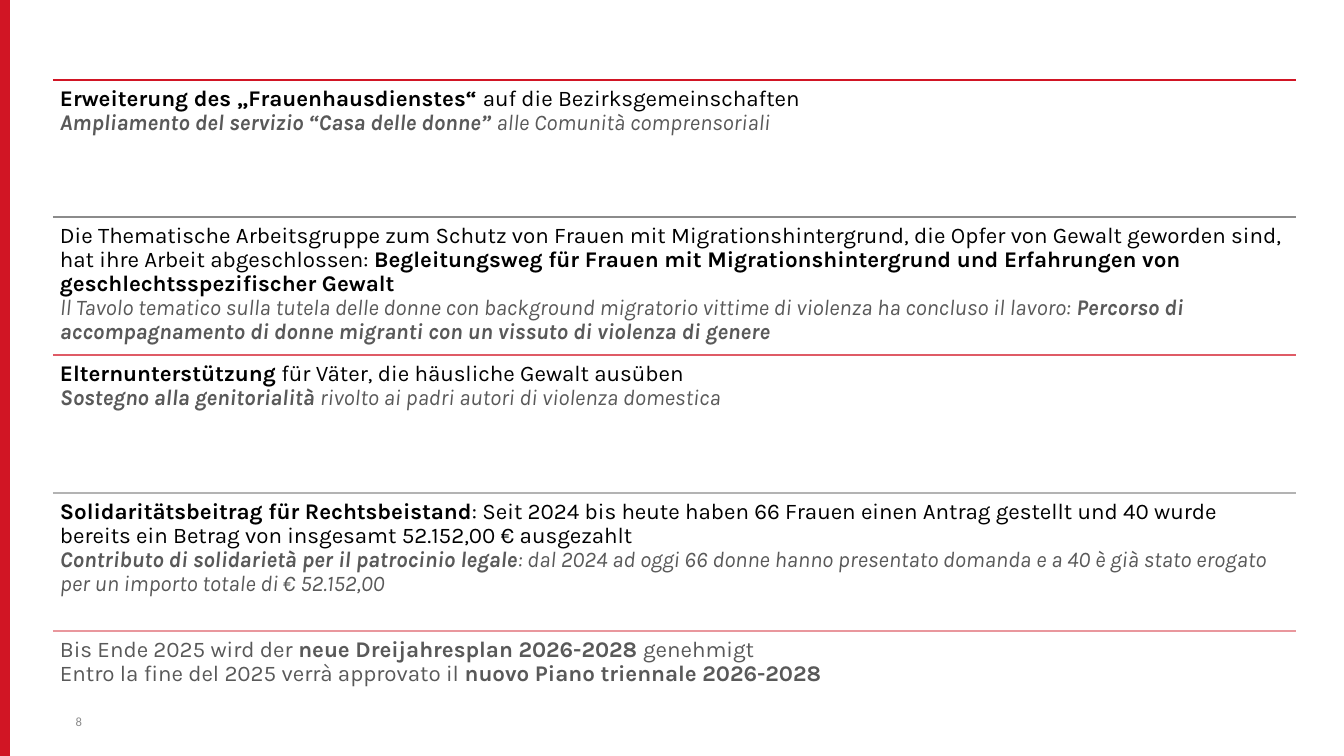
"""Build a slide listing five measures in German and Italian, divided by rules."""
from dataclasses import dataclass

from lxml import etree
from pptx import Presentation
from pptx import util as u
from pptx.dml.color import RGBColor
from pptx.enum import shapes, text
from pptx.oxml.ns import qn

PX = 914400 / 100.8
WIDTH, HEIGHT = 1344, 756
LEFT, ROW_WIDTH, ROW_HEIGHT = 53, 1243, 138
FIRST_TOP, LAST_TOP = 80, 631
INSET = 7


@dataclass(frozen=True)
class Theme:
    """Colours, fonts and type sizes."""
    accent: str = "D11524"
    german: str = "000000"
    italian: str = "595959"
    number: str = "8C8C8C"
    rules: tuple = ("D11524", "8B8B8B", "DF5B66", "B3B3B3", "E9979D")
    body_font: str = "Karla"
    number_font: str = "Calibri"
    body_size: int = 16
    number_size: int = 9
    rule_width: float = 1.5
    bar_width: float = 7.5


THEME = Theme()
GERMAN = (THEME.german, False)
ITALIAN = (THEME.italian, True)
PLAN = (THEME.italian, False)

# Each paragraph is a style and its text; ** switches bold on and off.
MEASURES = [
    [(GERMAN, "**Erweiterung des „Frauenhausdienstes“ **auf die Bezirksgemeinschaften"),
     (ITALIAN, "**Ampliamento del servizio “Casa delle donne” **alle Comunità comprensoriali")],
    [(GERMAN, "Die Thematische Arbeitsgruppe zum Schutz von Frauen mit Migrationshintergrund, "
              "die Opfer von Gewalt geworden sind, hat ihre Arbeit abgeschlossen: "
              "**Begleitungsweg für Frauen mit Migrationshintergrund und Erfahrungen von "
              "geschlechtsspezifischer Gewalt"),
     (ITALIAN, "ll Tavolo tematico sulla tutela delle donne con background migratorio vittime "
               "di violenza ha concluso il lavoro: **Percorso di accompagnamento di donne "
               "migranti con un vissuto di violenza di genere")],
    [(GERMAN, "**Elternunterstützung** für Väter, die häusliche Gewalt ausüben"),
     (ITALIAN, "**Sostegno alla genitorialità **rivolto ai padri autori di violenza domestica")],
    [(GERMAN, "**Solidaritätsbeitrag für Rechtsbeistand**: Seit 2024 bis heute haben 66 Frauen "
              "einen Antrag gestellt und 40 wurde bereits ein Betrag von insgesamt "
              "52.152,00 € ausgezahlt"),
     (ITALIAN, "**Contributo di solidarietà per il patrocinio legale**: dal 2024 ad oggi 66 donne "
               "hanno presentato domanda e a 40 è già stato erogato per un importo totale di "
               "€ 52.152,00")],
    [(PLAN, "Bis Ende 2025 wird der **neue Dreijahresplan 2026-2028 **genehmigt"),
     (PLAN, "Entro la fine del 2025 verrà approvato il **nuovo Piano triennale 2026-2028")],
]


def px(n):
    """Turn pixels into EMU."""
    return u.Emu(round(n * PX))


def add_line(s, x1, y1, x2, y2, color, width):
    """Draw a straight line without a shadow."""
    line = s.shapes.add_connector(shapes.MSO_CONNECTOR.STRAIGHT, px(x1), px(y1), px(x2), px(y2))
    line.line.color.rgb = RGBColor.from_string(color)
    line.line.width = u.Pt(width)
    etree.SubElement(line._element.spPr, qn("a:effectLst"))


def add_box(s, x, y, w, h, inset=0):
    """Add a wrapping text box and return its text frame."""
    tf = s.shapes.add_textbox(px(x), px(y), px(w), px(h)).text_frame
    tf.word_wrap = True
    tf.margin_left = tf.margin_right = tf.margin_top = tf.margin_bottom = px(inset)
    return tf


def style(font, name, size, color):
    """Set typeface, size and colour."""
    font.name = name
    font.size = u.Pt(size)
    font.color.rgb = RGBColor.from_string(color)


def fill_paragraph(p, look, marked):
    """Write marked text as regular and bold runs."""
    color, italic = look
    p.line_spacing = 0.9
    for i, part in enumerate(marked.split("**")):
        if part:
            r = p.add_run()
            r.text = part
            style(r.font, THEME.body_font, THEME.body_size, color)
            r.font.bold = i % 2 == 1
            r.font.italic = italic


def add_measure(s, top, rule, paragraphs):
    """Add one rule with its measure below."""
    add_line(s, LEFT, top, LEFT + ROW_WIDTH, top, rule, THEME.rule_width)
    tf = add_box(s, LEFT, top, ROW_WIDTH, ROW_HEIGHT, INSET)
    for i, (look, marked) in enumerate(paragraphs):
        p = tf.add_paragraph() if i else tf.paragraphs[0]
        fill_paragraph(p, look, marked)


def add_slide_number(s, number):
    """Add the slide number at the bottom left."""
    tf = add_box(s, 24, 714, 58, 15)
    tf.vertical_anchor = text.MSO_ANCHOR.MIDDLE
    p = tf.paragraphs[0]
    p.text = number
    p.alignment = text.PP_ALIGN.RIGHT
    style(p.runs[0].font, THEME.number_font, THEME.number_size, THEME.number)


def main():
    """Build and save the slide."""
    prs = Presentation()
    prs.slide_width, prs.slide_height = px(WIDTH), px(HEIGHT)
    s = prs.slides.add_slide(prs.slide_layouts[6])
    add_line(s, 5, 0, 5, HEIGHT, THEME.accent, THEME.bar_width)
    for i, (rule, paragraphs) in enumerate(zip(THEME.rules, MEASURES)):
        top = FIRST_TOP + (LAST_TOP - FIRST_TOP) * i // (len(MEASURES) - 1)
        add_measure(s, top, rule, paragraphs)
    add_slide_number(s, "8")
    prs.save("out.pptx")


if __name__ == "__main__":
    main()
